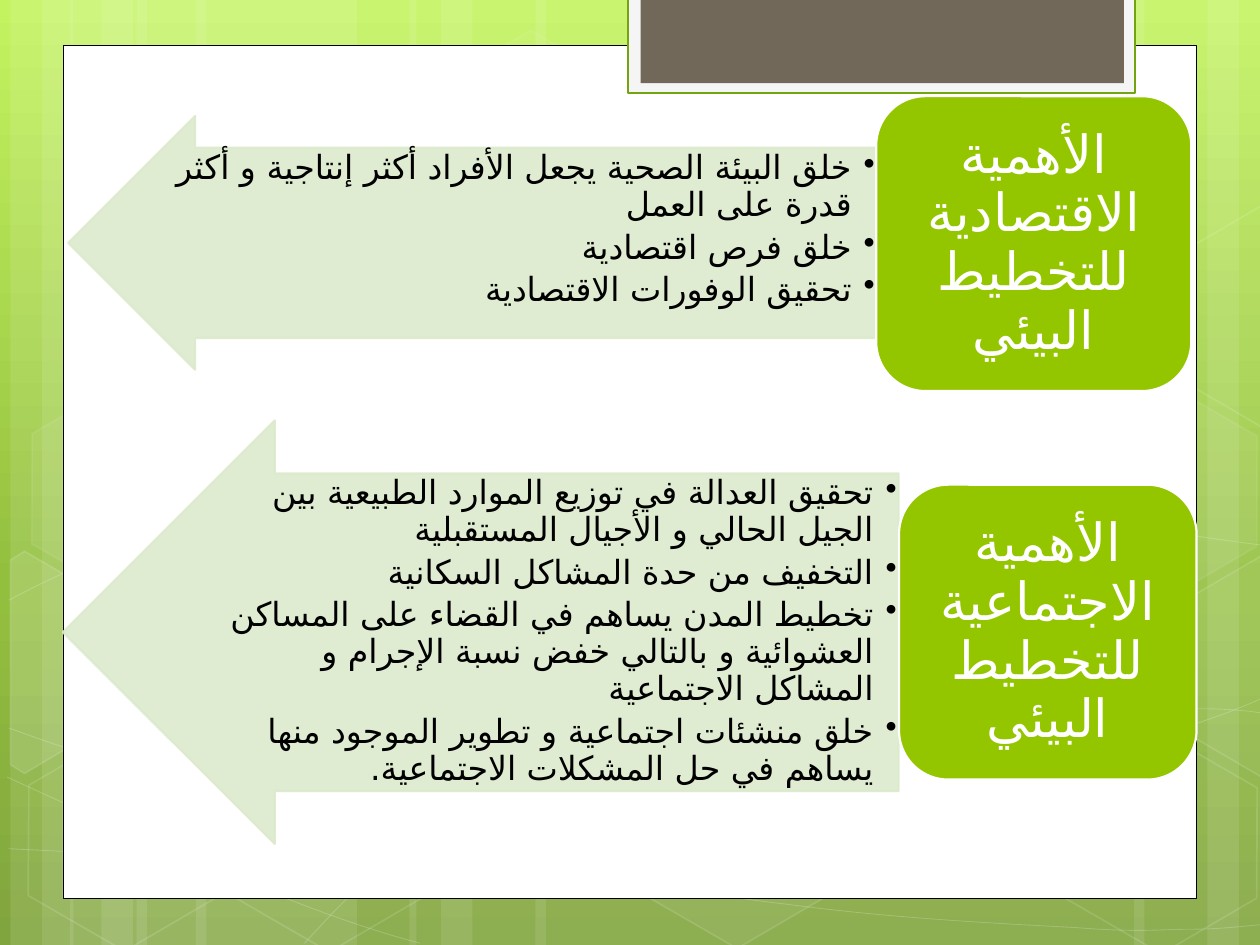
"""Build the slide on the economic and social value of environmental planning."""
from copy import deepcopy

from lxml import etree
from pptx import Presentation
from pptx.dml.color import RGBColor
from pptx.enum.shapes import MSO_SHAPE
from pptx.enum.text import MSO_ANCHOR, PP_ALIGN
from pptx.oxml.ns import qn
from pptx.util import Pt

RECT = MSO_SHAPE.RECTANGLE
HEX = MSO_SHAPE.HEXAGON
ARROW = MSO_SHAPE.RIGHT_ARROW
ROUND = MSO_SHAPE.ROUNDED_RECTANGLE
RIGHT, CENTER = PP_ALIGN.RIGHT, PP_ALIGN.CENTER
TOP, MIDDLE = MSO_ANCHOR.TOP, MSO_ANCHOR.MIDDLE

WHITE = RGBColor(0xFF, 0xFF, 0xFF)
BLACK = RGBColor(0, 0, 0)
LIME = RGBColor(0xC3, 0xF3, 0x5F)
LEAF = RGBColor(0x93, 0xBF, 0x3F)
MOSS = RGBColor(0x81, 0xA5, 0x3E)
SMOKE = RGBColor(0xF5, 0xF5, 0xF5)
OLIVE = RGBColor(0x74, 0xA5, 0x10)
TAUPE = RGBColor(0x71, 0x68, 0x5A)
PALE = RGBColor(0xDC, 0xEA, 0xCC)
GREEN = RGBColor(0x94, 0xC6, 0x00)
FONT, SCRIPT = "Quicksand", "DejaVu Sans"


def paint(shape, fill=None, alpha=100, line=None, width=1, sheer=100):
    shape.shadow.inherit = False
    if fill is None:
        shape.fill.background()
    else:
        shape.fill.solid()
        shape.fill.fore_color.rgb = fill
    if line is None:
        shape.line.fill.background()
    else:
        shape.line.color.rgb = line
        shape.line.width = Pt(width)
    props = shape._element.spPr
    for root, part in ((props, alpha), (props.find(qn("a:ln")), sheer)):
        tint = root.find(qn("a:solidFill") + "/" + qn("a:srgbClr"))
        if tint is not None and part < 100:
            etree.SubElement(tint, qn("a:alpha")).set("val", str(part * 1000))


def write(box, lines, size, color, align, anchor, pad, after, bullet):
    frame = shapes.add_textbox(*map(Pt, box)).text_frame
    frame.word_wrap = True
    frame.vertical_anchor = anchor
    frame.margin_left = frame.margin_right = Pt(pad[0])
    frame.margin_top = frame.margin_bottom = Pt(pad[1])
    for i, text in enumerate(lines):
        para = frame.paragraphs[0] if i == 0 else frame.add_paragraph()
        para.text = text
        para.runs[0]._r.get_or_add_rPr().set("lang", "ar-SA")
        para.alignment = align
        props = para._p.get_or_add_pPr()
        props.set("rtl", "1")
        if bullet:
            para.level = 1
            props.set("marR", "0")
            props.set("marL", str(Pt(13.5)))
            props.set("indent", str(-Pt(13.5)))
            etree.SubElement(props, qn("a:buChar")).set("char", "•")
        para.line_spacing = 0.93
        para.space_after = Pt(after)
        para.font.name = FONT
        para.font.size = Pt(size)
        para.font.color.rgb = color
        face = etree.SubElement(props.find(qn("a:defRPr")), qn("a:cs"))
        face.set("typeface", SCRIPT)


deck = Presentation()
deck.slide_width, deck.slide_height = Pt(720), Pt(540)
slide = deck.slides.add_slide(deck.slide_layouts[6])
shapes = slide.shapes

back = slide.background.fill
back.gradient()
back.gradient_angle = 270
stops = slide.background._cSld.find(".//" + qn("a:gsLst"))
stops.append(deepcopy(stops[-1]))
for stop, (spot, color) in zip(back.gradient_stops, ((0, LIME), (0.62, LEAF), (1, MOSS))):
    stop.position = spot
    stop.color.rgb = color

bands = [
    (78, 126), (6, 36), (24, 60), (112, 126), (40, 36), (58, 60),
    (528, 126), (690, 36), (648, 60), (306, 222), (234, 36), (252, 60),
]
for left, width in bands:
    band = shapes.add_shape(RECT, Pt(left), 0, Pt(width), Pt(540))
    paint(band, WHITE, 10)

curves = [
    [(5, 485), (44, 487), (83, 489), (137, 488), (191, 487), (258, 486), (330, 479),
     (402, 472), (504, 458), (570, 444), (636, 430), (703, 409), (725, 397)],
    [(5, 343), (26, 332), (47, 321), (87, 310), (128, 300), (186, 284), (250, 279),
     (314, 274), (392, 273), (471, 279), (551, 285), (682, 307), (725, 312)],
    [(4, 444), (91, 484), (178, 523), (240, 539)],
    [(5, 416), (27, 424), (50, 432), (92, 444), (134, 454), (197, 472), (257, 485),
     (317, 497), (392, 510), (452, 517), (512, 525), (576, 528), (614, 530),
     (652, 533), (662, 531), (680, 531), (699, 531), (712, 529), (725, 528)],
    [(174, 539), (187, 525), (200, 510), (217, 498), (235, 485), (259, 470), (279, 460),
     (300, 450), (312, 446), (338, 438), (364, 431), (413, 421), (438, 416),
     (464, 411), (467, 411), (490, 410), (511, 408), (547, 405), (572, 405),
     (597, 404), (638, 405), (638, 405), (654, 405), (670, 405), (686, 405),
     (699, 405), (711, 406), (718, 407), (724, 408), (722, 407), (724, 408)],
]
for curve in curves:
    pen = shapes.build_freeform(*map(Pt, curve[0]))
    pen.add_line_segments([tuple(map(Pt, dot)) for dot in curve[1:]], close=False)
    wave = pen.convert_to_shape()
    paint(wave, line=WHITE, width=0.5, sheer=20)
    track = wave._element.spPr.find(".//" + qn("a:pathLst"))[0]
    legs = track.findall(qn("a:lnTo"))
    for i in range(0, len(legs), 3):
        bend = etree.SubElement(track, qn("a:cubicBezTo"))
        for leg in legs[i:i + 3]:
            bend.append(leg[0])
            track.remove(leg)

cells = [
    (240.5, 26, 4, 8), (358, 424, 6, 12), (8, 425.5, 0, 12), (10, 224.5, 7, 8),
    (125, 426, 0, 12), (542, 326, 10, 12), (600.5, 427, 0, 12), (600.5, 226, 7, 8),
]
for left, top, alpha, sheer in cells:
    cell = shapes.add_shape(HEX, Pt(left), Pt(top), Pt(126), Pt(109.5))
    cell.adjustments[0] = 0.285
    cell.rotation = 30
    paint(cell, WHITE if alpha else None, alpha, WHITE, 1, sheer)

edges = [
    ([(6, 320), (14, 315), (69, 347), (68, 410), (14, 442), (6, 437)], 10),
    ([(667, 349), (721, 317.5), (726, 321), (726, 441), (721, 444), (667, 412.5)], 4),
    ([(667, 149), (721, 117.5), (726, 121), (726, 241), (721, 244), (667, 212.5)], 0),
]
for dots, alpha in edges:
    pen = shapes.build_freeform(*map(Pt, dots[0]))
    pen.add_line_segments([tuple(map(Pt, dot)) for dot in dots[1:]])
    paint(pen.convert_to_shape(), WHITE if alpha else None, alpha, WHITE, 1, 12)

panels = [
    ((36, 26, 648, 487.25), WHITE, BLACK, 0.5),
    ((359, -1.5, 289.75, 54.75), SMOKE, OLIVE, 1.25),
    ((366, -1.5, 276.25, 49), TAUPE, None, 0),
]
for box, fill, line, width in panels:
    paint(shapes.add_shape(RECT, *map(Pt, box)), fill, line=line, width=width)

topics = [
    ((39, 66.25, 461.5, 145), (93.5, 85, 407.5, 108.5), (500.75, 55, 180, 168.5),
     "الأهمية الاقتصادية للتخطيط البيئي",
     ["خلق البيئة الصحية يجعل الأفراد أكثر إنتاجية و أكثر قدرة على العمل",
      "خلق فرص اقتصادية",
      "تحقيق الوفورات الاقتصادية"]),
    ((36, 240.25, 477.5, 242), (126.75, 270.75, 386.75, 181.5), (513.75, 277, 170, 168.5),
     "الأهمية الاجتماعية للتخطيط البيئي",
     ["تحقيق العدالة في توزيع الموارد الطبيعية بين الجيل الحالي و الأجيال المستقبلية",
      "التخفيف من حدة المشاكل السكانية",
      "تخطيط المدن يساهم في القضاء على المساكن العشوائية و بالتالي خفض نسبة الإجرام و المشاكل الاجتماعية",
      "خلق منشئات اجتماعية و تطوير الموجود منها يساهم في حل المشكلات الاجتماعية."]),
]
for span, area, tile, head, points in topics:
    arrow = shapes.add_shape(ARROW, *map(Pt, span))
    arrow.adjustments[0], arrow.adjustments[1] = 0.75, 0.5
    arrow.rotation = 180
    paint(arrow, PALE, 90, PALE, 1.25, 90)
    write(area, points, 19, BLACK, RIGHT, TOP, (0.75, 0.75), 3, True)
    paint(shapes.add_shape(ROUND, *map(Pt, tile)), GREEN, line=WHITE, width=1.25)
    left, top, width, height = tile
    inner = (left + 8.25, top + 8.25, width - 16.5, height - 16.5)
    write(inner, [head], 30, WHITE, CENTER, MIDDLE, (8.5, 4.25), 10.5, False)

deck.save("out.pptx")
